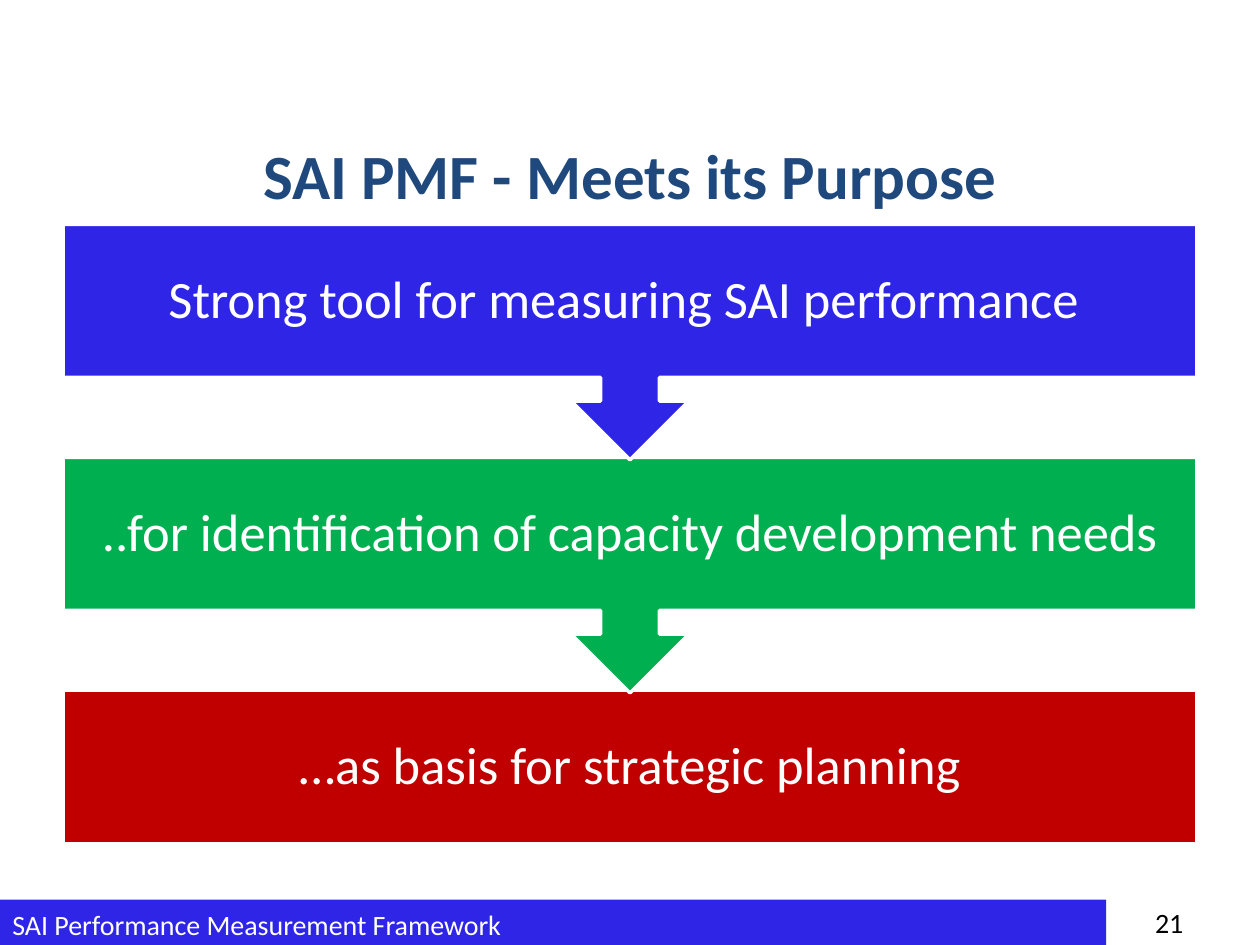
"""Build the SAI PMF purpose slide: three stacked steps joined by arrow callouts."""
from pptx import Presentation
from pptx.dml.color import RGBColor
from pptx.enum.shapes import MSO_SHAPE as SHAPE
from pptx.enum.text import MSO_ANCHOR as ANCHOR, PP_ALIGN as ALIGN
from pptx.util import Inches, Pt

WHITE = RGBColor(0xFF, 0xFF, 0xFF)
BLACK = RGBColor(0x00, 0x00, 0x00)
NAVY = RGBColor(0x1F, 0x49, 0x7D)
BLUE = RGBColor(0x2E, 0x25, 0xE7)
GREEN = RGBColor(0x00, 0xB0, 0x50)
RED = RGBColor(0xC0, 0x00, 0x00)

STEPS = [
    ("Strong tool for measuring SAI performance ", BLUE),
    ("..for identification of capacity development needs", GREEN),
    ("…as basis for strategic planning", RED),
]
LEFT, WIDTH = 0.5, 9
STEP_TOP, STEP_PITCH = 1.78, 1.85
BOX_H, CALLOUT_H = 1.22, 1.87


class SlideBuilder:
    font = "Calibri"

    def __init__(self, slide):
        self.shapes = slide.shapes

    def set_text(self, sp, text, size, color, align=ALIGN.LEFT,
                 anchor=ANCHOR.MIDDLE, bold=False):
        tf = sp.text_frame
        tf.text = text
        tf.word_wrap = True
        tf.vertical_anchor = anchor
        p = tf.paragraphs[0]
        p.alignment = align
        font = p.runs[0].font
        font.name, font.size, font.bold = self.font, Pt(size), bold
        font.color.rgb = color
        return tf

    def shape(self, kind, x, y, w, h, fill, outline=None):
        sp = self.shapes.add_shape(kind, Inches(x), Inches(y), Inches(w), Inches(h))
        sp.shadow.inherit = False
        sp.fill.solid()
        sp.fill.fore_color.rgb = fill
        if outline is None:
            sp.line.fill.background()
        else:
            sp.line.color.rgb = outline
            sp.line.width = Pt(2)
        return sp

    def text(self, x, y, w, h, text, size, color, **style):
        sp = self.shapes.add_textbox(Inches(x), Inches(y), Inches(w), Inches(h))
        return self.set_text(sp, text, size, color, **style)

    def step(self, y, text, fill, last):
        if last:
            self.shape(SHAPE.RECTANGLE, LEFT, y, WIDTH, BOX_H, fill, WHITE)
        else:
            sp = self.shape(SHAPE.UP_ARROW_CALLOUT, LEFT, y, WIDTH, CALLOUT_H, fill, WHITE)
            sp.rotation = 180
        tf = self.text(LEFT, y, WIDTH, BOX_H, text, 30, WHITE, align=ALIGN.CENTER)
        tf.margin_left = tf.margin_right = Inches(0.23)
        tf.margin_top = tf.margin_bottom = Inches(0.23)
        tf.paragraphs[0].line_spacing = 0.9


def main():
    prs = Presentation()
    prs.slide_width, prs.slide_height = Inches(10), Inches(7.5)
    s = SlideBuilder(prs.slides.add_slide(prs.slide_layouts[6]))

    footer = s.shape(SHAPE.RECTANGLE, 0, 7.14, 8.78, 0.39, BLUE)
    s.set_text(footer, "SAI Performance Measurement Framework", 16, WHITE)
    s.text(8.78, 7.14, 0.71, 0.36, "21", 16, BLACK, align=ALIGN.RIGHT, anchor=ANCHOR.TOP)
    s.text(LEFT, 1.07, WIDTH, 0.63, "SAI PMF - Meets its Purpose", 36, NAVY,
           align=ALIGN.CENTER, bold=True)

    for i, (text, fill) in reversed(list(enumerate(STEPS))):
        s.step(STEP_TOP + i * STEP_PITCH, text, fill, last=i == len(STEPS) - 1)

    prs.save("out.pptx")


if __name__ == "__main__":
    main()
